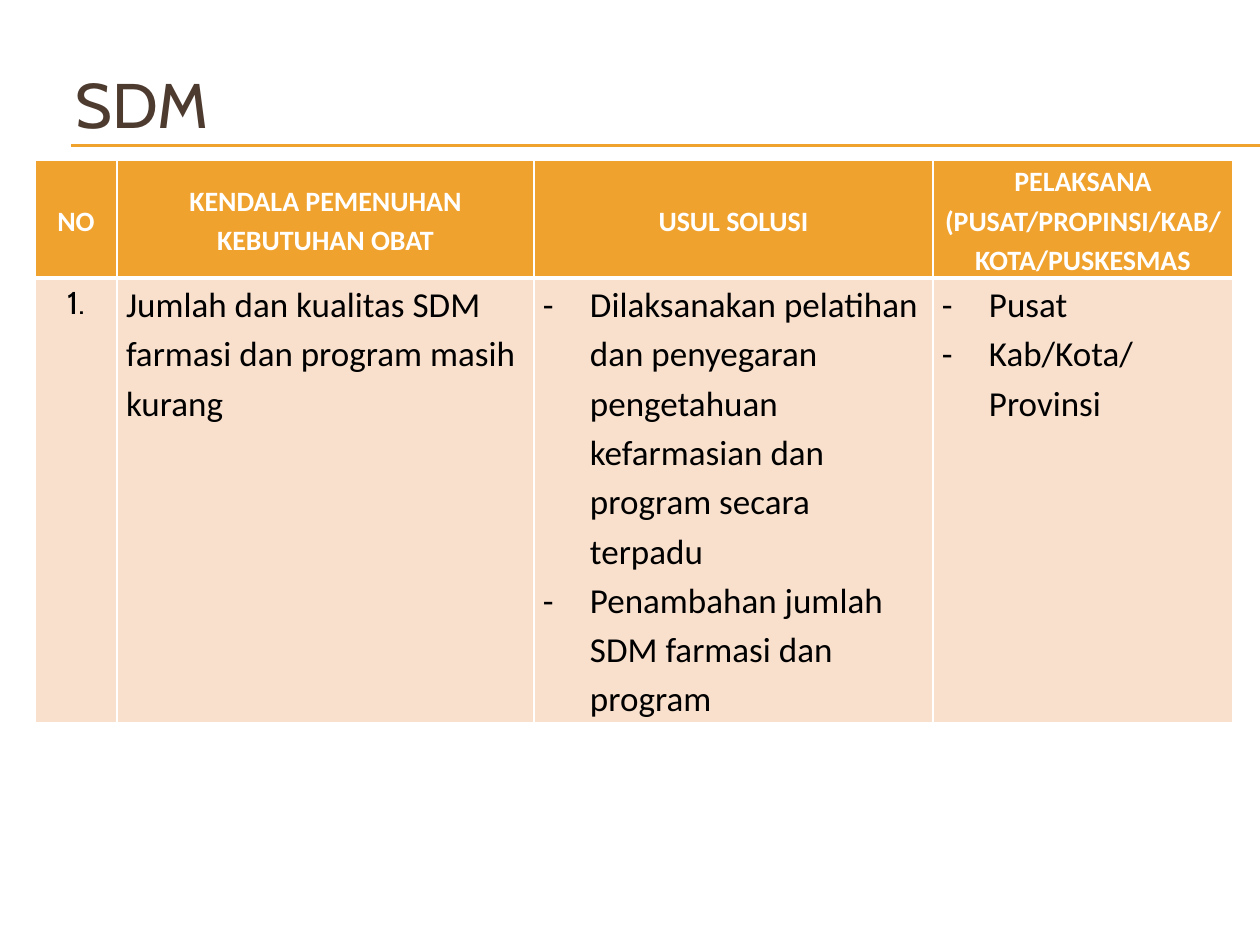
from dataclasses import dataclass
from lxml.etree import SubElement
from pptx import Presentation
from pptx.dml.color import RGBColor
from pptx.enum.shapes import MSO_CONNECTOR
from pptx.enum.text import MSO_ANCHOR, PP_ALIGN
from pptx.oxml.ns import qn
from pptx.util import Emu, Pt


@dataclass(frozen=True)
class Theme:
    """Colours, fonts and type sizes."""
    gold: str = "F0A22E"
    peach: str = "F9E0CD"
    brown: str = "4E3B30"
    white: str = "FFFFFF"
    black: str = "000000"
    head: str = "Cabin"
    body: str = "Calibri"
    title: int = 36
    label: int = 16
    count: int = 18
    text: int = 20


THEME = Theme()
COLS = (82, 417, 399, 300)
ROWS = (118, 445)
HEADS = ("NO", "KENDALA PEMENUHAN KEBUTUHAN OBAT", "USUL SOLUSI",
         "PELAKSANA (PUSAT/PROPINSI/KAB/KOTA/PUSKESMAS")
NEED = "Jumlah dan kualitas SDM farmasi dan program masih kurang"
PLANS = ("Dilaksanakan pelatihan dan penyegaran pengetahuan kefarmasian "
         "dan program secara terpadu",
         "Penambahan jumlah SDM farmasi dan program")
ACTORS = ("Pusat", "Kab/Kota/Provinsi")


def px(n):
    """Turn pixels into EMU."""
    return Emu(round(n * 914400 / 126))


def add_run(para, text, size, font, color, bold=False):
    """Add one styled run to a paragraph."""
    run = para.add_run()
    run.text = text
    run.font.size = Pt(size)
    run.font.name = font
    run.font.bold = bold
    run.font.color.rgb = RGBColor.from_string(color)


def add_title(slide, text, x, y, w, h):
    """Place the title in its box, with a double rule under it."""
    for top in (y + 100, y + 101):
        rule = slide.shapes.add_connector(
            MSO_CONNECTOR.STRAIGHT, px(x + 8), px(top), px(x + w), px(top))
        rule.line.color.rgb = RGBColor.from_string(THEME.gold)
        rule.line.width = Pt(0.75)
        SubElement(rule.element.spPr, qn("a:effectLst"))
    frame = slide.shapes.add_textbox(px(x), px(y), px(w), px(h)).text_frame
    frame.word_wrap = True
    frame.vertical_anchor = MSO_ANCHOR.MIDDLE
    add_run(frame.paragraphs[0], text, THEME.title, THEME.head, THEME.brown)


def style_cell(cell, fill, base):
    """Give a cell white borders and a plain fill."""
    props = cell._tc.get_or_add_tcPr()
    for side, width in zip("LRTB", (1, 1, 1, base)):
        edge = SubElement(props, qn(f"a:ln{side}"), w=str(Pt(width)))
        paint = SubElement(edge, qn("a:solidFill"))
        SubElement(paint, qn("a:srgbClr"), val=THEME.white)
    cell.fill.solid()
    cell.fill.fore_color.rgb = RGBColor.from_string(fill)


def fill_cell(cell, lines, size, color, bold=False, align=None, dash=False):
    """Write spaced paragraphs into a cell, with dashes if asked."""
    cell.margin_left = cell.margin_right = px(9)
    cell.margin_top = cell.margin_bottom = 0
    frame = cell.text_frame
    for i, line in enumerate(lines):
        para = frame.add_paragraph() if i else frame.paragraphs[0]
        para.alignment = align
        para.line_spacing = 1.15
        if dash:
            props = para._p.get_or_add_pPr()
            props.set("marL", str(px(47)))
            props.set("indent", str(-px(47)))
            SubElement(props, qn("a:buFont"), typeface=THEME.body)
            SubElement(props, qn("a:buChar"), char="-")
        add_run(para, line, size, THEME.body, color, bold)


def add_grid(slide, x, y):
    """Place the table of needs, plans and actors."""
    table = slide.shapes.add_table(len(ROWS), len(COLS), px(x), px(y),
                                   px(sum(COLS)), px(sum(ROWS))).table
    for col, width in zip(table.columns, COLS):
        col.width = px(width)
    for row, height in zip(table.rows, ROWS):
        row.height = px(height)
    for i, head in enumerate(HEADS):
        top, low = table.cell(0, i), table.cell(1, i)
        style_cell(top, THEME.gold, 3)
        style_cell(low, THEME.peach, 1)
        top.vertical_anchor = MSO_ANCHOR.MIDDLE
        fill_cell(top, (head,), THEME.label, THEME.white, True, PP_ALIGN.CENTER)
    count = table.cell(1, 0).text_frame.paragraphs[0]
    count.alignment = PP_ALIGN.CENTER
    add_run(count, "1.", THEME.count, THEME.head, THEME.black)
    fill_cell(table.cell(1, 1), (NEED,), THEME.text, THEME.black)
    for i, items in enumerate((PLANS, ACTORS), 2):
        fill_cell(table.cell(1, i), items, THEME.text, THEME.black, dash=True)


def main():
    """Build and save the slide."""
    deck = Presentation()
    deck.slide_width, deck.slide_height = px(1260), px(945)
    slide = deck.slides.add_slide(deck.slide_layouts[6])
    add_title(slide, "SDM", 63, 45, 1197, 116)
    add_grid(slide, 35, 160)
    deck.save("out.pptx")


if __name__ == "__main__":
    main()
